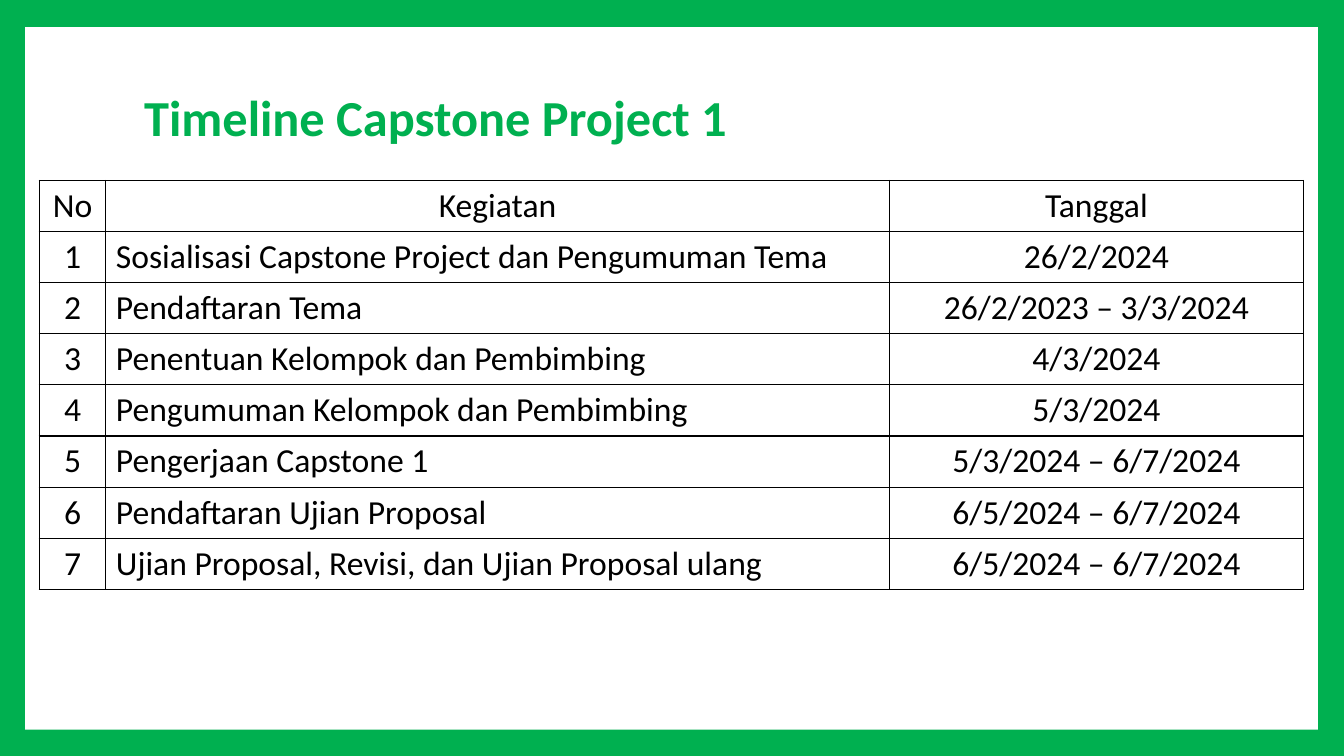
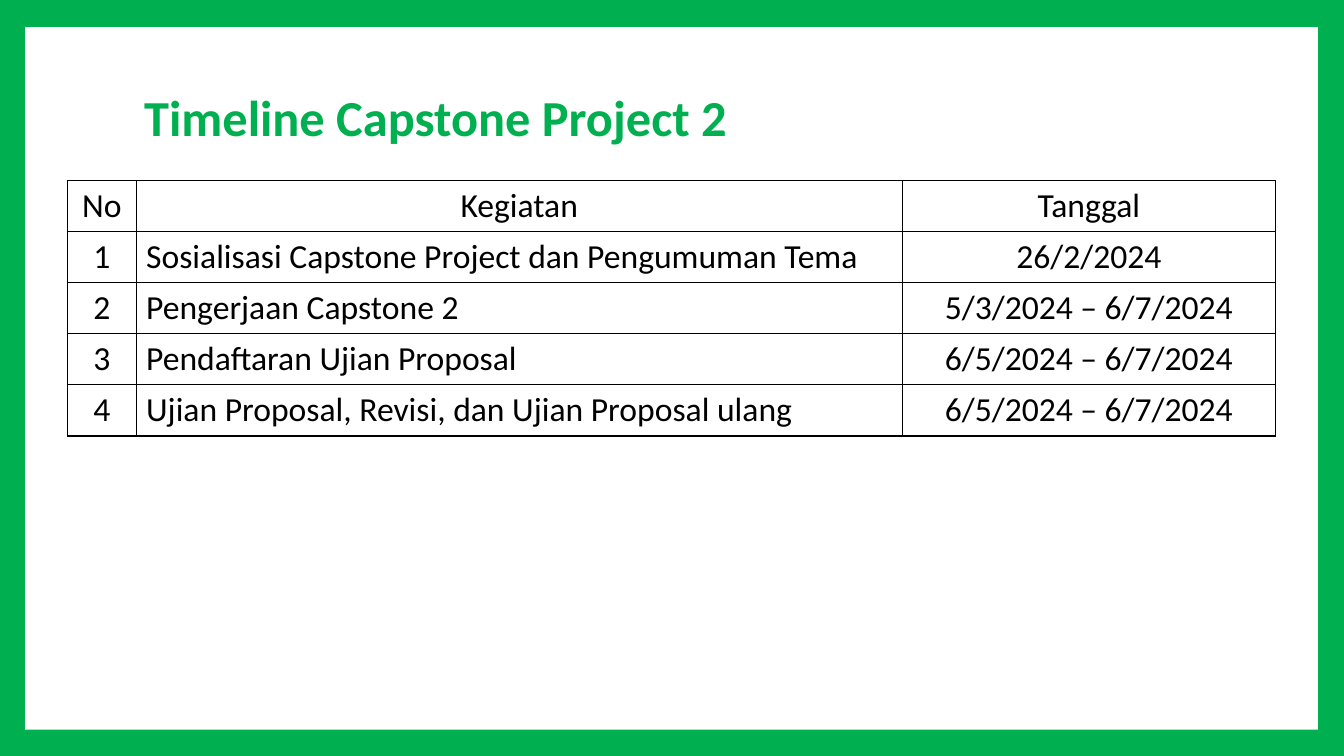
from lxml import etree
from pptx import Presentation
from pptx.dml.color import RGBColor
from pptx.enum import shapes, text
from pptx.oxml import ns
from pptx.util import Inches, Pt

GREEN = RGBColor(0x00, 0xB0, 0x50)
WHITE = RGBColor(0xFF, 0xFF, 0xFF)
BLACK = RGBColor(0x00, 0x00, 0x00)
TITLE_ONLY = 5
HEADINGS = ("No", "Kegiatan", "Tanggal")

CAPSTONE_1 = [
    ("Sosialisasi Capstone Project dan Pengumuman Tema", "26/2/2024"),
    ("Pendaftaran Tema", "26/2/2023 – 3/3/2024"),
    ("Penentuan Kelompok dan Pembimbing", "4/3/2024"),
    ("Pengumuman Kelompok dan Pembimbing", "5/3/2024"),
    ("Pengerjaan Capstone 1", "5/3/2024 – 6/7/2024"),
    ("Pendaftaran Ujian Proposal", "6/5/2024 – 6/7/2024"),
    ("Ujian Proposal, Revisi, dan Ujian Proposal ulang", "6/5/2024 – 6/7/2024"),
]
CAPSTONE_2 = [
    ("Sosialisasi Capstone Project dan Pengumuman Tema", "26/2/2024"),
    ("Pengerjaan Capstone 2", "5/3/2024 – 6/7/2024"),
    ("Pendaftaran Ujian Proposal", "6/5/2024 – 6/7/2024"),
    ("Ujian Proposal, Revisi, dan Ujian Proposal ulang", "6/5/2024 – 6/7/2024"),
]


class TimelineDeck:
    """Holds the green-framed style and the slide being built."""

    font = "Calibri"
    title_size = Pt(36)
    table_size = Pt(24)
    row_height = Inches(0.5)
    border = Pt(1)

    def __init__(self):
        self.prs = Presentation()
        self.prs.slide_width = Inches(13.33)
        self.prs.slide_height = Inches(7.5)
        frame = self.prs.slide_master.background.fill
        frame.solid()
        frame.fore_color.rgb = GREEN
        self.slide = None

    def new_slide(self, heading):
        self.slide = self.prs.slides.add_slide(self.prs.slide_layouts[TITLE_ONLY])
        self.panel()
        self.title(heading)

    def panel(self):
        panel = self.slide.shapes.add_shape(
            shapes.MSO_SHAPE.RECTANGLE,
            Inches(0.25), Inches(0.27), Inches(12.82), Inches(6.97))
        panel.shadow.inherit = False
        panel.fill.solid()
        panel.fill.fore_color.rgb = WHITE
        panel.line.fill.background()
        self.slide.shapes._spTree.insert(2, panel._element)

    def title(self, heading):
        title = self.slide.shapes.title
        title.left, title.top = Inches(1.33), Inches(0.8)
        title.width, title.height = Inches(10.75), Inches(0.75)
        frame = title.text_frame
        frame.auto_size = text.MSO_AUTO_SIZE.NONE
        frame.vertical_anchor = text.MSO_ANCHOR.TOP
        self.add_words(frame.paragraphs[0], heading, self.title_size, GREEN,
                       text.PP_ALIGN.LEFT, bold=True)

    def add_words(self, paragraph, words, size, color, align, bold=False):
        paragraph.alignment = align
        run = paragraph.add_run()
        run.text = words
        run.font.name, run.font.size, run.font.bold = self.font, size, bold
        run.font.color.rgb = color

    def outline(self, cell):
        properties = cell._tc.get_or_add_tcPr()
        for side in ("a:lnL", "a:lnR", "a:lnT", "a:lnB"):
            line = etree.SubElement(properties, ns.qn(side), w=str(self.border))
            fill = etree.SubElement(line, ns.qn("a:solidFill"))
            etree.SubElement(fill, ns.qn("a:srgbClr"), val=str(BLACK))

    def timeline(self, left, widths, activities):
        rows = [HEADINGS] + [(str(number), *activity)
                             for number, activity in enumerate(activities, 1)]
        table = self.slide.shapes.add_table(
            len(rows), len(widths), Inches(left), Inches(1.79),
            Inches(sum(widths)), self.row_height * len(rows)).table
        table.first_row = table.horz_banding = False
        for column, width in zip(table.columns, widths):
            column.width = Inches(width)
        for r, row in enumerate(rows):
            for c, words in enumerate(row):
                cell = table.cell(r, c)
                self.outline(cell)
                cell.fill.solid()
                cell.fill.fore_color.rgb = WHITE
                is_activity = r > 0 and c == 1
                align = text.PP_ALIGN.LEFT if is_activity else text.PP_ALIGN.CENTER
                self.add_words(cell.text_frame.paragraphs[0], words,
                               self.table_size, BLACK, align)


def main():
    deck = TimelineDeck()
    deck.new_slide("Timeline Capstone Project 1")
    deck.timeline(0.39, (0.66, 7.77, 4.11), CAPSTONE_1)
    deck.new_slide("Timeline Capstone Project 2")
    deck.timeline(0.67, (0.68, 7.6, 3.7), CAPSTONE_2)
    deck.prs.save("out.pptx")


if __name__ == "__main__":
    main()
